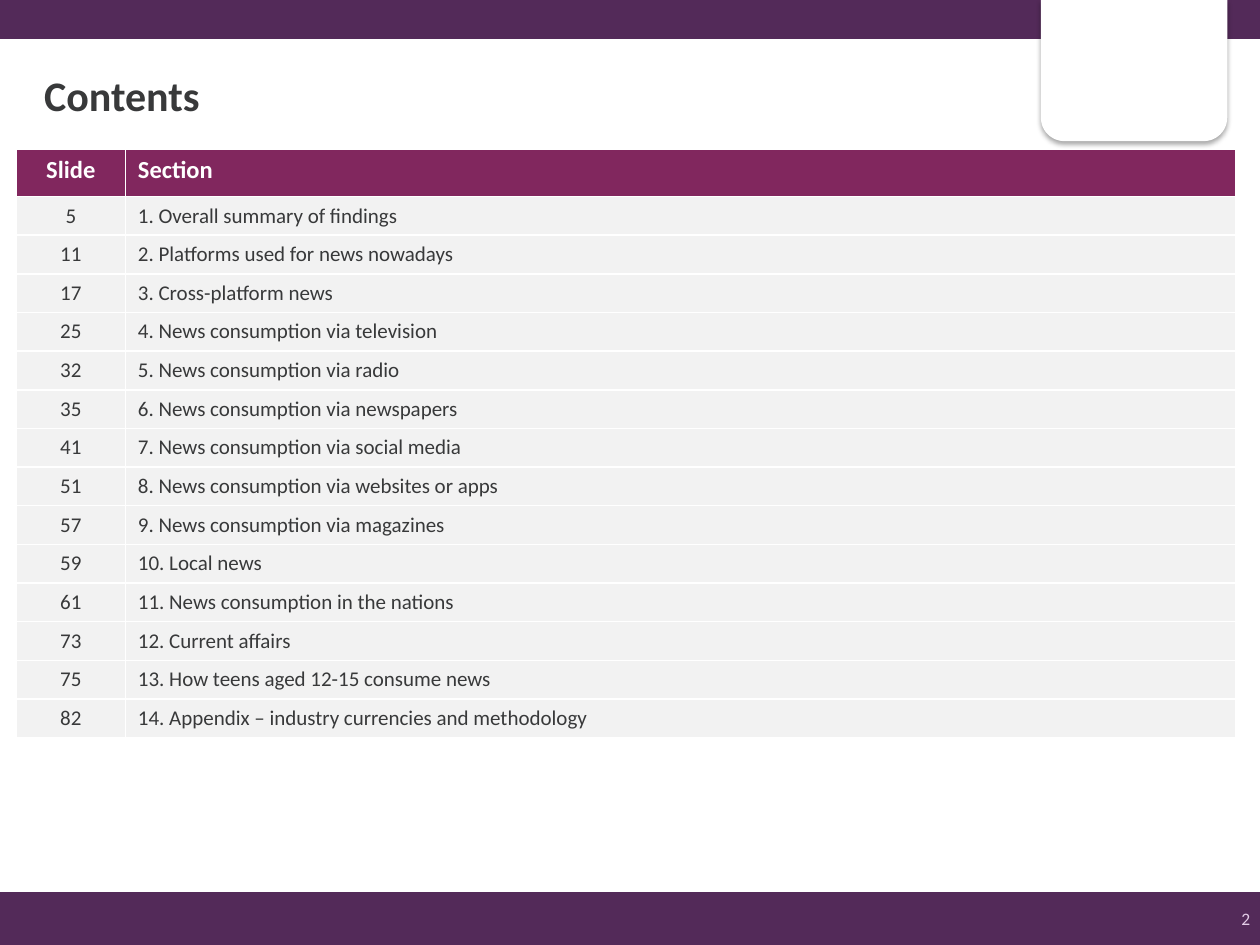
from dataclasses import dataclass
from lxml.etree import SubElement
from pptx import Presentation
from pptx.dml.color import RGBColor
from pptx.enum.shapes import MSO_SHAPE as Shape
from pptx.enum.text import MSO_ANCHOR as Anchor, PP_ALIGN as Align
from pptx.oxml import parse_xml
from pptx.oxml.ns import nsdecls, qn
from pptx.slide import Slide
from pptx.util import Inches, Pt

PURPLE = RGBColor(0x53, 0x2A, 0x59)
PLUM = RGBColor(0x81, 0x27, 0x5E)
LILAC = RGBColor(0xE3, 0xCC, 0xE7)
INK = RGBColor(0x38, 0x39, 0x3A)
PALE = RGBColor(0xF2, 0xF2, 0xF2)
WHITE = RGBColor(0xFF, 0xFF, 0xFF)

COLUMNS, ROWS = 100, 75
SLIDE_WIDTH, SLIDE_HEIGHT = Inches(10), Inches(7.5)

SECTIONS = [
    (5, "Overall summary of findings"),
    (11, "Platforms used for news nowadays"),
    (17, "Cross-platform news"),
    (25, "News consumption via television"),
    (32, "News consumption via radio"),
    (35, "News consumption via newspapers"),
    (41, "News consumption via social media"),
    (51, "News consumption via websites or apps"),
    (57, "News consumption via magazines"),
    (59, "Local news"),
    (61, "News consumption in the nations"),
    (73, "Current affairs"),
    (75, "How teens aged 12-15 consume news"),
    (82, "Appendix – industry currencies and methodology"),
]


@dataclass
class ContentsPage:
    slide: Slide
    font_name: str = "Calibri"

    def across(self, columns):
        return round(SLIDE_WIDTH * columns / COLUMNS)

    def down(self, rows):
        return round(SLIDE_HEIGHT * rows / ROWS)

    def box(self, left, top, width, height):
        return self.across(left), self.down(top), self.across(width), self.down(height)

    def add_text(self, frame, text, size, color, bold=False, align=Align.LEFT):
        paragraph = frame.paragraphs[0]
        paragraph.alignment = align
        run = paragraph.add_run()
        run.text = text
        font = run.font
        font.name, font.size, font.bold = self.font_name, Pt(size), bold
        font.color.rgb = color

    def title(self, text, *place):
        shape = self.slide.shapes.title
        shape.left, shape.top, shape.width, shape.height = self.box(*place)
        shape.text_frame.vertical_anchor = Anchor.MIDDLE
        self.add_text(shape.text_frame, text, 24, INK, bold=True)

    def panel(self, kind, color, *place):
        shape = self.slide.shapes.add_shape(kind, *self.box(*place))
        shape.shadow.inherit = False
        shape.fill.solid()
        shape.fill.fore_color.rgb = color
        shape.line.fill.background()
        return shape

    def tab(self, *place):
        shape = self.panel(Shape.ROUND_2_SAME_RECTANGLE, WHITE, *place)
        shape.rotation = 180
        effects = shape.element.spPr.find(qn("a:effectLst"))
        effects.append(parse_xml(
            f'<a:outerShdw {nsdecls("a")} blurRad="{Pt(3.1)}" dist="{Pt(1.8)}" '
            'dir="5400000" rotWithShape="0"><a:srgbClr val="000000">'
            '<a:alpha val="35000"/></a:srgbClr></a:outerShdw>'))

    def label(self, text, size, color, align, *place):
        frame = self.slide.shapes.add_textbox(*self.box(*place)).text_frame
        frame.word_wrap = True
        self.add_text(frame, text, size, color, align=align)

    def border(self, cell, color, width):
        properties = cell._tc.get_or_add_tcPr()
        for side in ("lnL", "lnR", "lnT", "lnB"):
            line = SubElement(properties, qn(f"a:{side}"), w=str(Pt(width)))
            fill = SubElement(line, qn("a:solidFill"))
            SubElement(fill, qn("a:srgbClr"), val=str(color))

    def table(self, records, widths, header_height, row_height, left, top):
        height = header_height + row_height * (len(records) - 1)
        place = self.box(left, top, sum(widths), height)
        table = self.slide.shapes.add_table(len(records), len(widths), *place).table
        table.horz_banding = False
        for column, width in zip(table.columns, widths):
            column.width = self.across(width)
        for index, record in enumerate(records):
            header = index == 0
            table.rows[index].height = self.down(header_height if header else row_height)
            for position, text in enumerate(record):
                cell = table.cell(index, position)
                self.border(cell, WHITE, 1)
                cell.fill.solid()
                cell.fill.fore_color.rgb = PLUM if header else PALE
                cell.vertical_anchor = Anchor.TOP if header else Anchor.MIDDLE
                align = Align.LEFT if position else Align.CENTER
                size, color = (14, WHITE) if header else (12, INK)
                self.add_text(cell.text_frame, text, size, color, header, align)


def main():
    presentation = Presentation()
    presentation.slide_width, presentation.slide_height = SLIDE_WIDTH, SLIDE_HEIGHT
    page = ContentsPage(presentation.slides.add_slide(presentation.slide_layouts[5]))

    page.panel(Shape.RECTANGLE, PURPLE, 0, 70.8, COLUMNS, 4.2)
    page.panel(Shape.RECTANGLE, PURPLE, 0, 0, COLUMNS, 3.1)
    page.tab(82.6, 0, 14.8, 11.2)
    page.label("2", 10, LILAC, Align.RIGHT, 95.7, 71.6, 4.5, 2.8)
    page.title("Contents", 2.5, 5.8, 90.2, 3.4)

    entries = [(str(number), f"{order}. {name}")
               for order, (number, name) in enumerate(SECTIONS, 1)]
    page.table([("Slide", "Section"), *entries], (8.65, 88.15), 3.75, 3.07, 1.3, 11.85)
    presentation.save("out.pptx")


if __name__ == "__main__":
    main()
